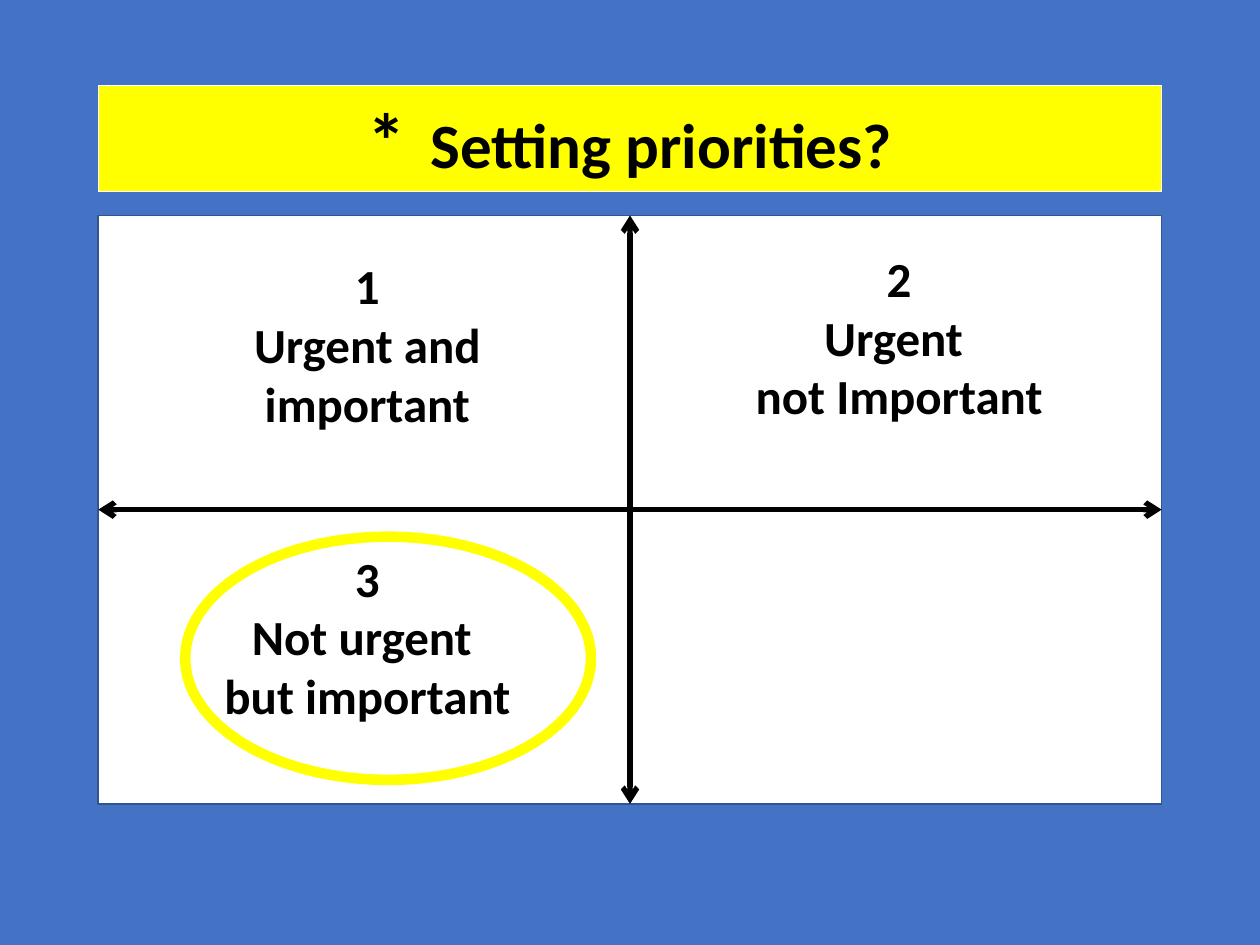
"""Build a slide with a priority matrix of urgency and importance."""
from dataclasses import dataclass

import lxml.etree
import pptx
import pptx.dml.color
import pptx.enum.shapes
import pptx.enum.text
import pptx.oxml.ns
import pptx.util

Inches = pptx.util.Inches
Pt = pptx.util.Pt
Shape = pptx.enum.shapes.MSO_SHAPE
Anchor = pptx.enum.text.MSO_ANCHOR
qn = pptx.oxml.ns.qn

COLOURS = {
    "background": "4472C4",
    "panel": "FFFFFF",
    "panel_edge": "325491",
    "highlight": "FFFF00",
    "ink": "000000",
}
MARGIN = 0.78
PANEL_WIDTH = 8.44


@dataclass(frozen=True)
class Box:
    left: float
    top: float
    width: float
    height: float

    def lengths(self) -> tuple:
        return tuple(map(Inches, (self.left, self.top, self.width, self.height)))


@dataclass(frozen=True)
class Quadrant:
    left: float
    top: float
    lines: tuple[str, ...]


QUADRANTS = (
    Quadrant(1.47, 1.94, ("1", "Urgent and important")),
    Quadrant(5.69, 1.88, ("2", "Urgent ", "not Important")),
    Quadrant(1.47, 4.26, ("3", "Not urgent ", "but important")),
)


def rgb(name: str) -> pptx.dml.color.RGBColor:
    return pptx.dml.color.RGBColor.from_string(COLOURS[name])


def add_figure(slide, kind, box: Box, edge: str, weight: float, fill: str | None = None):
    figure = slide.shapes.add_shape(kind, *box.lengths())
    figure.shadow.inherit = False
    if fill:
        figure.fill.solid()
        figure.fill.fore_color.rgb = rgb(fill)
    else:
        figure.fill.background()
    figure.line.color.rgb = rgb(edge)
    figure.line.width = Pt(weight)
    return figure


def add_axis(slide, panel, begin_site: int, end_site: int) -> None:
    axis = slide.shapes.add_connector(pptx.enum.shapes.MSO_CONNECTOR.STRAIGHT, 0, 0, 0, 0)
    axis.begin_connect(panel, begin_site)
    axis.end_connect(panel, end_site)
    axis.line.color.rgb = rgb("ink")
    axis.line.width = Pt(3)
    properties = axis.element.spPr
    outline = properties.find(qn("a:ln"))
    for end in ("a:headEnd", "a:tailEnd"):
        lxml.etree.SubElement(outline, qn(end), type="arrow")
    lxml.etree.SubElement(properties, qn("a:effectLst"))


def add_text(paragraph, text: str, size: float = 28, colour: str = "ink") -> None:
    paragraph.alignment = pptx.enum.text.PP_ALIGN.CENTER
    run = paragraph.add_run()
    run.text = text
    run.font.name = "Calibri"
    run.font.size = Pt(size)
    run.font.bold = True
    run.font.color.rgb = rgb(colour)


def add_quadrant(slide, quadrant: Quadrant) -> None:
    box = Box(quadrant.left, quadrant.top, 2.89, 1.58)
    frame = slide.shapes.add_textbox(*box.lengths()).text_frame
    frame.word_wrap = True
    frame.vertical_anchor = Anchor.MIDDLE
    for index, line in enumerate(quadrant.lines):
        add_text(frame.add_paragraph() if index else frame.paragraphs[0], line)


def add_title(slide) -> None:
    banner = add_figure(slide, Shape.RECTANGLE, Box(MARGIN, 0.68, PANEL_WIDTH, 0.84),
                        "panel", 0.75, "highlight")
    frame = banner.text_frame
    frame.word_wrap = True
    frame.auto_size = pptx.enum.text.MSO_AUTO_SIZE.SHAPE_TO_FIT_TEXT
    frame.vertical_anchor = Anchor.TOP
    add_text(frame.paragraphs[0], "*", size=44)
    add_text(frame.paragraphs[0], " \tSetting priorities?", size=36)


def main() -> None:
    presentation = pptx.Presentation()
    presentation.slide_width = Inches(10)
    presentation.slide_height = Inches(7.5)
    slide = presentation.slides.add_slide(presentation.slide_layouts[6])
    slide.background.fill.solid()
    slide.background.fill.fore_color.rgb = rgb("background")

    panel = add_figure(slide, Shape.RECTANGLE, Box(MARGIN, 1.71, PANEL_WIDTH, 4.67),
                       "panel_edge", 1, "panel")
    add_axis(slide, panel, 0, 2)
    add_axis(slide, panel, 1, 3)
    for quadrant in QUADRANTS:
        add_quadrant(slide, quadrant)
    add_title(slide)
    add_figure(slide, Shape.OVAL, Box(1.47, 4.26, 3.22, 1.93), "highlight", 6)
    presentation.save("out.pptx")


if __name__ == "__main__":
    main()
